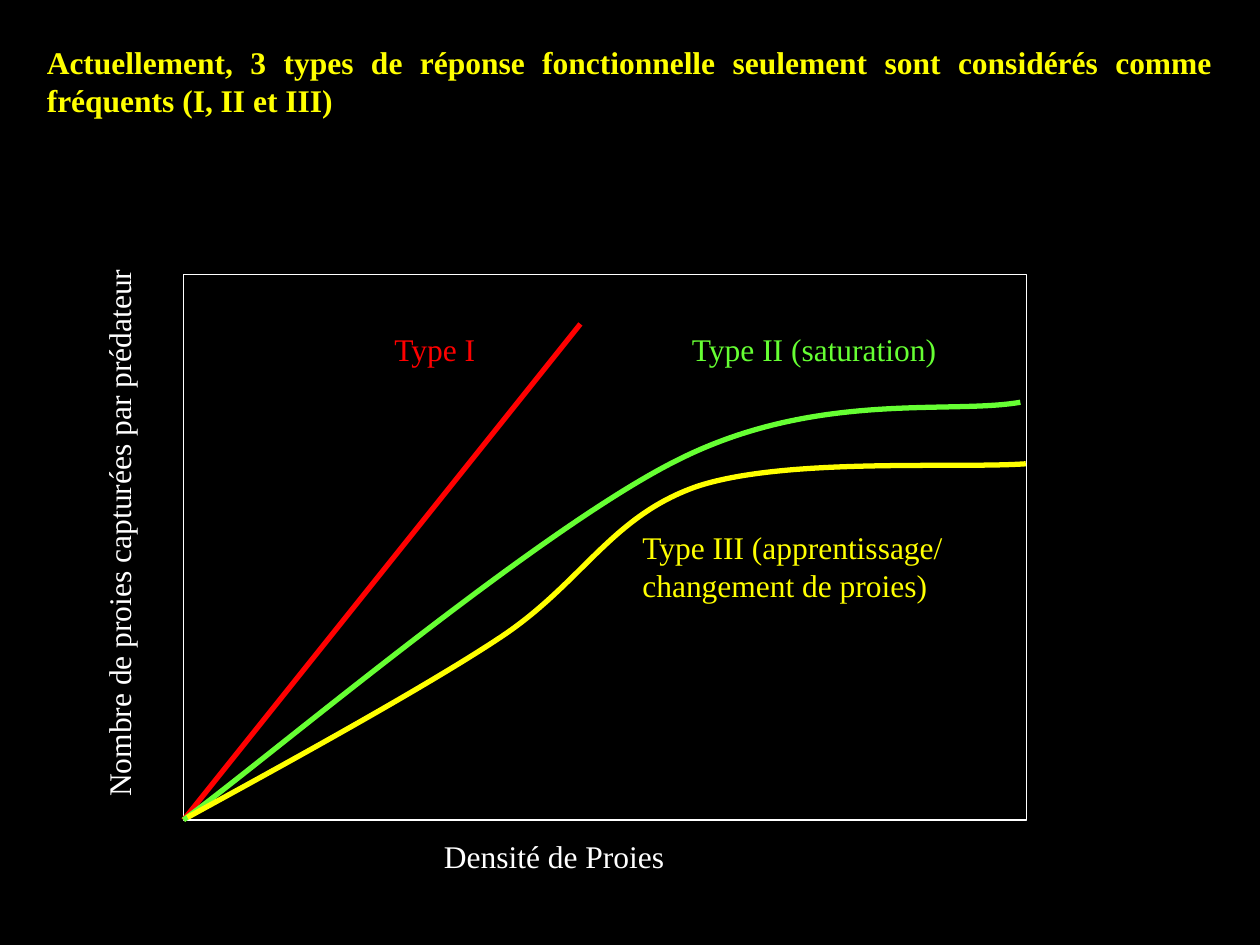
from dataclasses import dataclass

import pptx
import pptx.dml.color
import pptx.enum.shapes
import pptx.enum.text
import pptx.oxml.ns
import pptx.util
from lxml import etree
from pptx.util import Cm

COLORS = {
    "background": "000000",
    "axis": "FFFFFF",
    "type_1": "FF0000",
    "type_2": "66FF33",
    "type_3": "FFFF00",
}
FONT_FORMAT = {"name": "Times New Roman", "size": pptx.util.Pt(18)}

Point = tuple[float, float]


@dataclass
class Label:
    text: str
    color: str
    left: float
    top: float
    width: float
    height: float = 1.02
    wrap: bool = False
    rotation: float = 0


@dataclass
class Curve:
    color: str
    points: list[Point]  # start, then three points for each cubic Bézier


LABELS = [
    Label("Type III (apprentissage/\nchangement de proies)", "type_3",
          12.7, 10.52, 8.99, 1.78, wrap=True),
    Label("Type I", "type_1", 7.7, 6.53, 2.18),
    Label("Type II (saturation)", "type_2", 13.7, 6.53, 5.49),
    Label("Densité de Proies", "axis", 8.7, 16.74, 7.01, 1.78, wrap=True),
    Label("Nombre de proies capturées par prédateur", "axis",
          -3.18, 10.23, 11.15, rotation=270),
]
CURVES = [
    Curve("type_2", [(3.7, 16.53), (5.36, 15.32), (10.85, 10.67), (13.67, 9.27),
                     (16.46, 7.87), (19.13, 8.36), (20.57, 8.11)]),
    Curve("type_3", [(3.78, 16.48), (4.83, 15.9), (8.31, 14.02), (10.01, 12.9),
                     (11.73, 11.79), (12.29, 10.41), (14.07, 9.8),
                     (15.85, 9.22), (19.3, 9.45), (20.68, 9.35)]),
]


def rgb(name: str) -> pptx.dml.color.RGBColor:
    return pptx.dml.color.RGBColor.from_string(COLORS[name])


def write_text(shape, text: str, color: str, wrap: bool, **extra) -> None:
    frame = shape.text_frame
    frame_format = {
        "text": text,
        "word_wrap": wrap,
        "auto_size": pptx.enum.text.MSO_AUTO_SIZE.SHAPE_TO_FIT_TEXT,
        "vertical_anchor": pptx.enum.text.MSO_ANCHOR.TOP,
    }
    for name, value in frame_format.items():
        setattr(frame, name, value)
    for paragraph in frame.paragraphs:
        for name, value in (FONT_FORMAT | extra).items():
            setattr(paragraph.font, name, value)
        paragraph.font.color.rgb = rgb(color)


def set_line(shape, color: str, width: float) -> None:
    shape.line.color.rgb = rgb(color)
    shape.line.width = pptx.util.Pt(width)


def draw_curve(group, curve: Curve) -> None:
    start, *others = [(Cm(x), Cm(y)) for x, y in curve.points]
    builder = group.shapes.build_freeform(*start)
    builder.add_line_segments(others, close=False)
    shape = builder.convert_to_shape()
    shape.shadow.inherit = False
    shape.fill.background()
    set_line(shape, curve.color, 3)

    # Turn each three line segments into one cubic Bézier
    outline = next(shape._element.iter(pptx.oxml.ns.qn("a:path")))
    segments = outline.findall(pptx.oxml.ns.qn("a:lnTo"))
    for first in range(0, len(segments), 3):
        bezier = etree.SubElement(outline, pptx.oxml.ns.qn("a:cubicBezTo"))
        for segment in segments[first:first + 3]:
            bezier.append(segment[0])
            outline.remove(segment)


def draw_label(slide, label: Label) -> None:
    shape = slide.shapes.add_textbox(
        Cm(label.left), Cm(label.top), Cm(label.width), Cm(label.height))
    shape.rotation = label.rotation
    write_text(shape, label.text, label.color, label.wrap)


def main() -> None:
    presentation = pptx.Presentation()
    presentation.slide_width, presentation.slide_height = Cm(25.4), Cm(19.05)
    slide = presentation.slides.add_slide(presentation.slide_layouts[5])
    slide.background.fill.solid()
    slide.background.fill.fore_color.rgb = rgb("background")

    # Title
    title = slide.shapes.title
    title_place = {"left": 0.69, "top": 0.74, "width": 24.01, "height": 1.78}
    for name, value in title_place.items():
        setattr(title, name, Cm(value))
    write_text(title, "Actuellement, 3 types de réponse fonctionnelle seulement sont "
               "considérés comme fréquents (I, II et III)", "type_3", True, bold=True)
    title.text_frame.paragraphs[0].alignment = pptx.enum.text.PP_ALIGN.JUSTIFY

    # Plot frame
    plot = slide.shapes.add_group_shape()
    frame = plot.shapes.add_shape(
        pptx.enum.shapes.MSO_SHAPE.RECTANGLE, Cm(3.7), Cm(5.53), Cm(17), Cm(11))
    frame.shadow.inherit = False
    frame.fill.background()
    set_line(frame, "axis", 0.75)

    # Type I: straight response
    line = plot.shapes.add_connector(
        pptx.enum.shapes.MSO_CONNECTOR.STRAIGHT, Cm(3.7), Cm(16.53), Cm(11.7), Cm(6.53))
    set_line(line, "type_1", 3)
    etree.SubElement(line._element.spPr, pptx.oxml.ns.qn("a:effectLst"))

    # Types II and III, then all labels
    for curve in CURVES:
        draw_curve(plot, curve)
    for label in LABELS:
        draw_label(slide, label)

    presentation.save("out.pptx")


if __name__ == "__main__":
    main()
